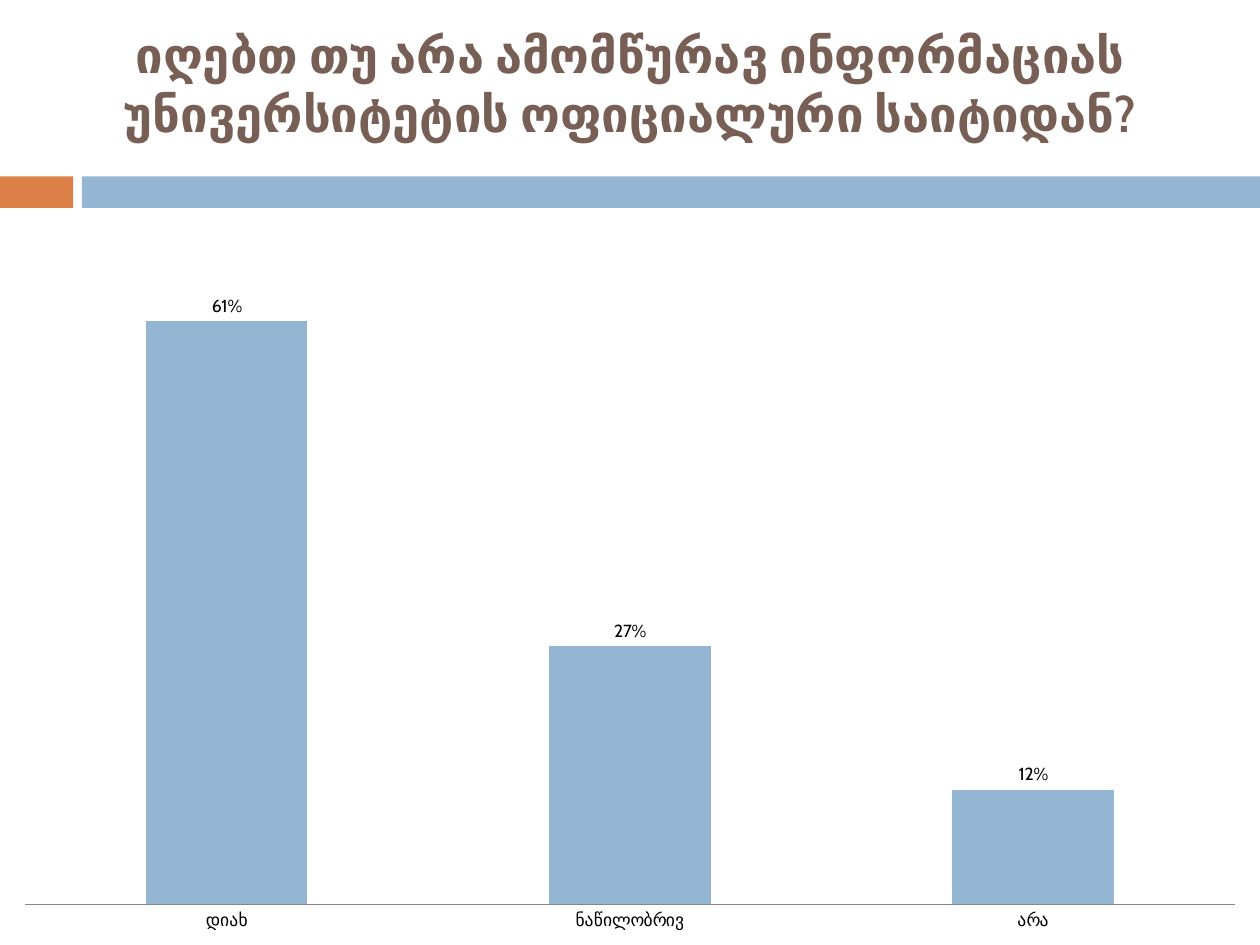
from pptx import Presentation
from pptx.chart.data import CategoryChartData
from pptx.dml.color import RGBColor
from pptx.enum.chart import XL_CHART_TYPE, XL_LABEL_POSITION, XL_TICK_MARK
from pptx.enum.shapes import MSO_SHAPE
from pptx.enum.text import MSO_ANCHOR, PP_ALIGN
from pptx.util import Inches, Pt

BROWN = RGBColor(0x77, 0x5F, 0x55)
ORANGE = RGBColor(0xDD, 0x80, 0x47)
BLUE = RGBColor(0x94, 0xB6, 0xD2)
BLACK = RGBColor(0, 0, 0)
GREY = RGBColor(0x86, 0x86, 0x86)


class SlideBuilder:
    font_name = "Cabin"

    def __init__(self, page):
        self.page = page

    def style(self, font, size, color, bold=False):
        font.name = self.font_name
        font.size = Pt(size)
        font.bold = bold
        font.color.rgb = color

    def band(self, left, top, width, height, color):
        box = self.page.shapes.add_shape(
            MSO_SHAPE.RECTANGLE, Inches(left), Inches(top), Inches(width), Inches(height))
        box.shadow.inherit = False
        box.fill.solid()
        box.fill.fore_color.rgb = color
        box.line.fill.background()

    def title(self, left, top, width, height, text):
        box = self.page.shapes.add_textbox(
            Inches(left), Inches(top), Inches(width), Inches(height))
        frame = box.text_frame
        frame.word_wrap = True
        frame.vertical_anchor = MSO_ANCHOR.MIDDLE
        frame.text = text
        para = frame.paragraphs[0]
        para.alignment = PP_ALIGN.CENTER
        for span in para.runs:
            self.style(span.font, 28, BROWN, bold=True)

    def column_chart(self, left, top, width, height, answers):
        data = CategoryChartData(number_format="0%")
        data.categories = list(answers)
        data.add_series("Series 1", list(answers.values()))
        chart = self.page.shapes.add_chart(
            XL_CHART_TYPE.COLUMN_CLUSTERED, Inches(left), Inches(top),
            Inches(width), Inches(height), data).chart
        self.style(chart.font, 10, BLACK)
        chart.has_title = False
        chart.has_legend = False

        value_axis = chart.value_axis
        value_axis.visible = False
        value_axis.has_major_gridlines = False
        value_axis.minimum_scale = 0
        value_axis.maximum_scale = 0.7
        value_axis.tick_labels.number_format = "0%"
        value_axis.tick_labels.number_format_is_linked = False

        category_axis = chart.category_axis
        category_axis.major_tick_mark = XL_TICK_MARK.NONE
        category_axis.minor_tick_mark = XL_TICK_MARK.NONE
        category_axis.format.line.color.rgb = GREY
        category_axis.format.line.width = Pt(0.75)

        plot = chart.plots[0]
        plot.gap_width = 150
        plot.overlap = -25
        plot.vary_by_categories = False
        series = plot.series[0]
        series.format.fill.solid()
        series.format.fill.fore_color.rgb = BLUE

        labels = series.data_labels
        labels.show_value = True
        labels.number_format = "0%"
        labels.number_format_is_linked = False
        labels.position = XL_LABEL_POSITION.OUTSIDE_END
        self.style(labels.font, 10, BLACK)


def main():
    deck = Presentation()
    deck.slide_width = Inches(10)
    deck.slide_height = Inches(7.5)
    builder = SlideBuilder(deck.slides.add_slide(deck.slide_layouts[6]))
    builder.band(0, 1.4, 0.58, 0.25, ORANGE)
    builder.band(0.65, 1.4, 9.35, 0.25, BLUE)
    builder.title(
        0, 0, 10, 1.33,
        "იღებთ თუ არა ამომწურავ ინფორმაციას უნივერსიტეტის ოფიციალური საიტიდან?")
    builder.column_chart(
        0, 1.75, 10, 5.75, {"დიახ": 0.61, "ნაწილობრივ": 0.27, "არა": 0.12})
    deck.save("out.pptx")


if __name__ == "__main__":
    main()
